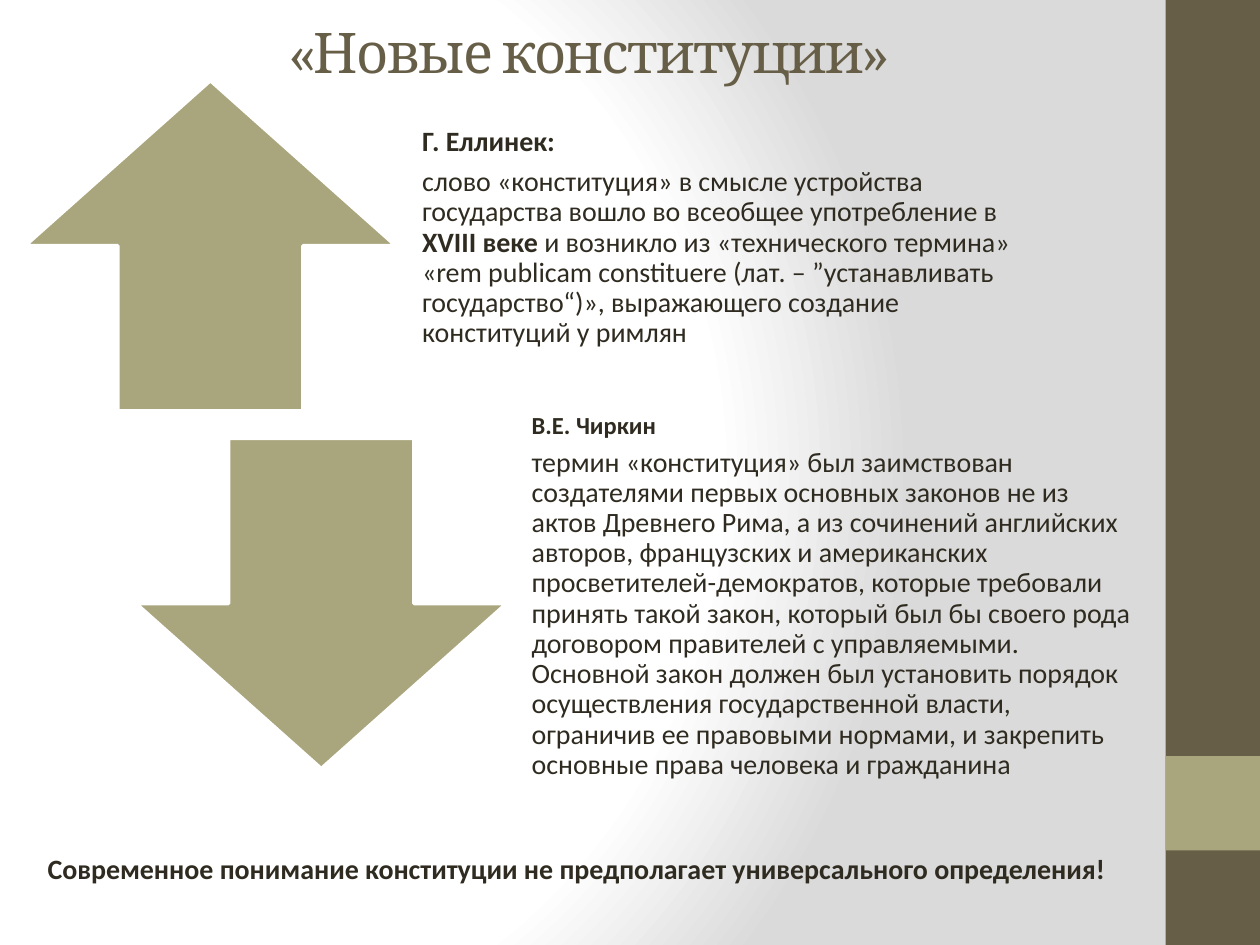
import pptx
import pptx.util
import pptx.oxml
import pptx.oxml.ns
import pptx.dml.color
import pptx.enum.shapes
import pptx.enum.text

Pt = pptx.util.Pt
RGBColor = pptx.dml.color.RGBColor
Shape = pptx.enum.shapes.MSO_SHAPE
Anchor = pptx.enum.text.MSO_ANCHOR

BROWN = RGBColor(0x67, 0x5E, 0x47)
OLIVE = RGBColor(0xA9, 0xA5, 0x7C)
INK = RGBColor(0x2F, 0x2B, 0x20)
WHITE = RGBColor(0xFF, 0xFF, 0xFF)

GRADIENT = f"""<a:gradFill {pptx.oxml.ns.nsdecls("a")} rotWithShape="1">
<a:gsLst>
<a:gs pos="0"><a:srgbClr val="FFFFFF"/></a:gs>
<a:gs pos="75000"><a:srgbClr val="FFFFFF"/></a:gs>
<a:gs pos="100000"><a:srgbClr val="DADADA"/></a:gs>
</a:gsLst>
<a:path path="circle"><a:fillToRect l="20000" t="50000" r="100000" b="50000"/></a:path>
</a:gradFill>"""


def add_block(kind, left, top, width, height, color):
    block = page.shapes.add_shape(kind, Pt(left), Pt(top), Pt(width), Pt(height))
    block.shadow.inherit = False
    block.fill.solid()
    block.fill.fore_color.rgb = color
    block.line.fill.background()
    return block


def add_text(left, top, width, height, paragraphs, color=INK, font="Calibri"):
    box = page.shapes.add_textbox(Pt(left), Pt(top), Pt(width), Pt(height))
    frame = box.text_frame
    frame.word_wrap = True
    for index, (size, runs) in enumerate(paragraphs):
        para = frame.add_paragraph() if index else frame.paragraphs[0]
        para.font.size = Pt(size)
        para.font.name = font
        para.font.color.rgb = color
        for text, bold in runs:
            span = para.add_run()
            span.text = text
            span.font.bold = bold
    return frame


deck = pptx.Presentation()
deck.slide_width = Pt(720)
deck.slide_height = Pt(540)
page = deck.slides.add_slide(deck.slide_layouts[6])

page.background.fill.gradient()
old_fill = page.background._cSld.find(".//" + pptx.oxml.ns.qn("a:gradFill"))
old_fill.getparent().replace(old_fill, pptx.oxml.parse_xml(GRADIENT))

add_block(Shape.RECTANGLE, 666, 0, 54, 540, BROWN)
add_block(Shape.RECTANGLE, 666, 432, 54, 54, OLIVE)

title = add_text(36.72, 9.36, 599.76, 39.6, [(32, [("«Новые конституции»", False)])], BROWN, "Cambria")
title.vertical_anchor = Anchor.MIDDLE
title.paragraphs[0].alignment = pptx.enum.text.PP_ALIGN.CENTER
title.paragraphs[0].runs[0].font._element.set("spc", "-100")

for kind, left, top in [(Shape.UP_ARROW, 14.4, 46.08), (Shape.DOWN_ARROW, 77.76, 250.56)]:
    arrow = add_block(kind, left, top, 211.68, 188.64, OLIVE)
    arrow.line.color.rgb = WHITE
    arrow.line.width = Pt(2)

jellinek = [
    (16, [("Г. Еллинек:", True)]),
    (16, [
        ("слово «конституция» в смысле устройства государства вошло во всеобщее употребление в ", False),
        ("XVIII веке ", True),
        ("и возникло из «технического термина» «rem publicam constituere (лат. – ”устанавливать "
         "государство“)», выражающего создание конституций у римлян", False),
    ]),
]
chirkin = [
    (14, [("В.Е. Чиркин", True)]),
    (16, [
        ("термин «конституция» был заимствован создателями первых основных законов не из актов "
         "Древнего Рима, а из сочинений английских авторов, французских и американских "
         "просветителей-демократов, которые требовали принять такой закон, который был бы своего рода "
         "договором правителей с управляемыми. Основной закон должен был установить порядок "
         "осуществления государственной власти, ограничив ее правовыми нормами, и закрепить основные "
         "права человека и гражданина", False),
    ]),
]
for left, top, height, inset, paragraphs in [
    (232.56, 64.8, 151.2, 8.64, jellinek),
    (295.92, 221.76, 246.24, 7.92, chirkin),
]:
    frame = add_text(left, top, 358.56, height, paragraphs)
    frame.vertical_anchor = Anchor.MIDDLE
    frame.margin_top = 0
    frame.margin_left = frame.margin_right = frame.margin_bottom = Pt(inset)
    for para in frame.paragraphs:
        para.line_spacing = 0.9
        para.space_after = Pt(para.font.size.pt * 0.35)

add_text(20.16, 483.12, 635.04, 26.64, [
    (16, [("Современное понимание конституции не предполагает универсального определения!", True)]),
])

deck.save("out.pptx")
